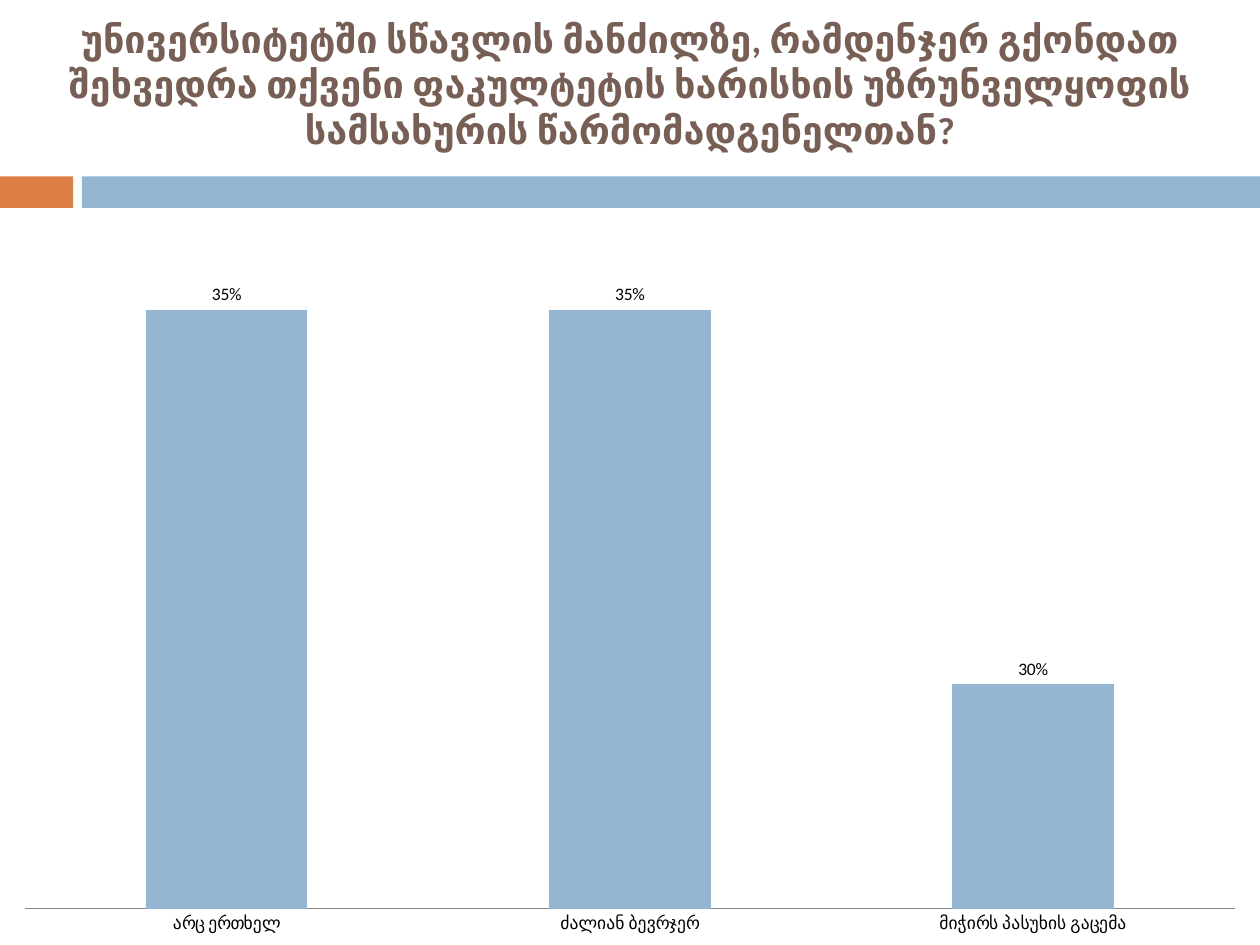
from lxml import etree
from pptx import Presentation
from pptx.chart.data import CategoryChartData
from pptx.dml.color import RGBColor
from pptx.enum.chart import XL_CHART_TYPE, XL_LABEL_POSITION, XL_TICK_MARK
from pptx.enum.shapes import MSO_SHAPE
from pptx.enum.text import MSO_ANCHOR, PP_ALIGN
from pptx.oxml.ns import qn
from pptx.util import Inches, Pt

ORANGE = RGBColor(0xDD, 0x80, 0x47)
BLUE = RGBColor(0x94, 0xB6, 0xD2)
BROWN = RGBColor(0x77, 0x5F, 0x55)
BLACK = RGBColor(0, 0, 0)
GRAY = RGBColor(0x86, 0x86, 0x86)

QUESTION = (
    "უნივერსიტეტში სწავლის მანძილზე, რამდენჯერ გქონდათ შეხვედრა თქვენი "
    "ფაკულტეტის ხარისხის უზრუნველყოფის სამსახურის წარმომადგენელთან?"
)
ANSWERS = {"არც ერთხელ": 0.35, "ძალიან ბევრჯერ": 0.35, "მიჭირს პასუხის გაცემა": 0.3}


class SurveySlide:
    """Holds the style and the current slide, on a grid of 100 columns by 75 rows."""

    font = "Calibri"
    columns, rows = 100, 75

    def __init__(self, deck):
        self.deck = deck
        self.page = deck.slides.add_slide(deck.slide_layouts[6])

    def area(self, column, row, wide, high):
        across = self.deck.slide_width / self.columns
        down = self.deck.slide_height / self.rows
        return [round(n) for n in (column * across, row * down, wide * across, high * down)]

    def band(self, color, *cells):
        shape = self.page.shapes.add_shape(MSO_SHAPE.RECTANGLE, *self.area(*cells))
        shape.shadow.inherit = False
        shape.fill.solid()
        shape.fill.fore_color.rgb = color
        shape.line.fill.background()

    def title(self, text, size, *cells):
        box = self.page.shapes.add_textbox(*self.area(*cells))
        box.text_frame.word_wrap = True
        box.text_frame.vertical_anchor = MSO_ANCHOR.MIDDLE
        para = box.text_frame.paragraphs[0]
        para.alignment = PP_ALIGN.CENTER
        span = para.add_run()
        span.text = text
        span.font.name = self.font
        span.font.size = Pt(size)
        span.font.bold = True
        span.font.color.rgb = BROWN

    def column_chart(self, answers, *cells):
        data = CategoryChartData(number_format="0%")
        data.categories = list(answers)
        data.add_series("Series 1", list(answers.values()))
        frame = self.page.shapes.add_chart(
            XL_CHART_TYPE.COLUMN_CLUSTERED, *self.area(*cells), data
        )
        chart = frame.chart
        chart.has_legend = False
        chart.has_title = False
        chart.font.name = self.font
        chart.font.size = Pt(10)
        chart.font.color.rgb = BLACK

        scale = chart.value_axis
        scale.minimum_scale, scale.maximum_scale = 0.27, 0.36
        scale.has_major_gridlines = False
        scale.tick_labels.number_format = "0%"
        scale.tick_labels.number_format_is_linked = False
        scale.visible = False
        chart.category_axis.major_tick_mark = XL_TICK_MARK.NONE
        chart.category_axis.format.line.color.rgb = GRAY
        chart.category_axis.format.line.width = Pt(0.75)

        plot = chart.plots[0]
        plot.gap_width, plot.overlap = 150, -25
        plot.vary_by_categories = False
        fill = plot.series[0].format.fill
        fill.solid()
        fill.fore_color.rgb = BLUE
        plot.has_data_labels = True
        labels = plot.data_labels
        labels.show_value = True
        labels.number_format = "0%"
        labels.number_format_is_linked = False
        labels.position = XL_LABEL_POSITION.OUTSIDE_END
        self.place_plot(chart, x=0.02, y=0.02, w=0.96, h=0.93)

    def place_plot(self, chart, **shares):
        area = chart.element.find(".//" + qn("c:plotArea"))
        layout = area.find(qn("c:layout"))
        if layout is None:
            layout = etree.Element(qn("c:layout"))
            area.insert(0, layout)
        manual = etree.SubElement(layout, qn("c:manualLayout"))
        settings = {"layoutTarget": "inner", "xMode": "edge", "yMode": "edge", **shares}
        for name, value in settings.items():
            etree.SubElement(manual, qn("c:" + name)).set("val", str(value))


def main():
    deck = Presentation()
    deck.slide_width, deck.slide_height = Inches(10), Inches(7.5)
    survey = SurveySlide(deck)
    survey.band(ORANGE, 0, 14, 5.8, 2.5)
    survey.band(BLUE, 6.5, 14, 93.5, 2.5)
    survey.title(QUESTION, 21.6, 0, 0, 100, 13.3)
    survey.column_chart(ANSWERS, 0, 17.5, 100, 57.5)
    deck.save("out.pptx")


if __name__ == "__main__":
    main()
